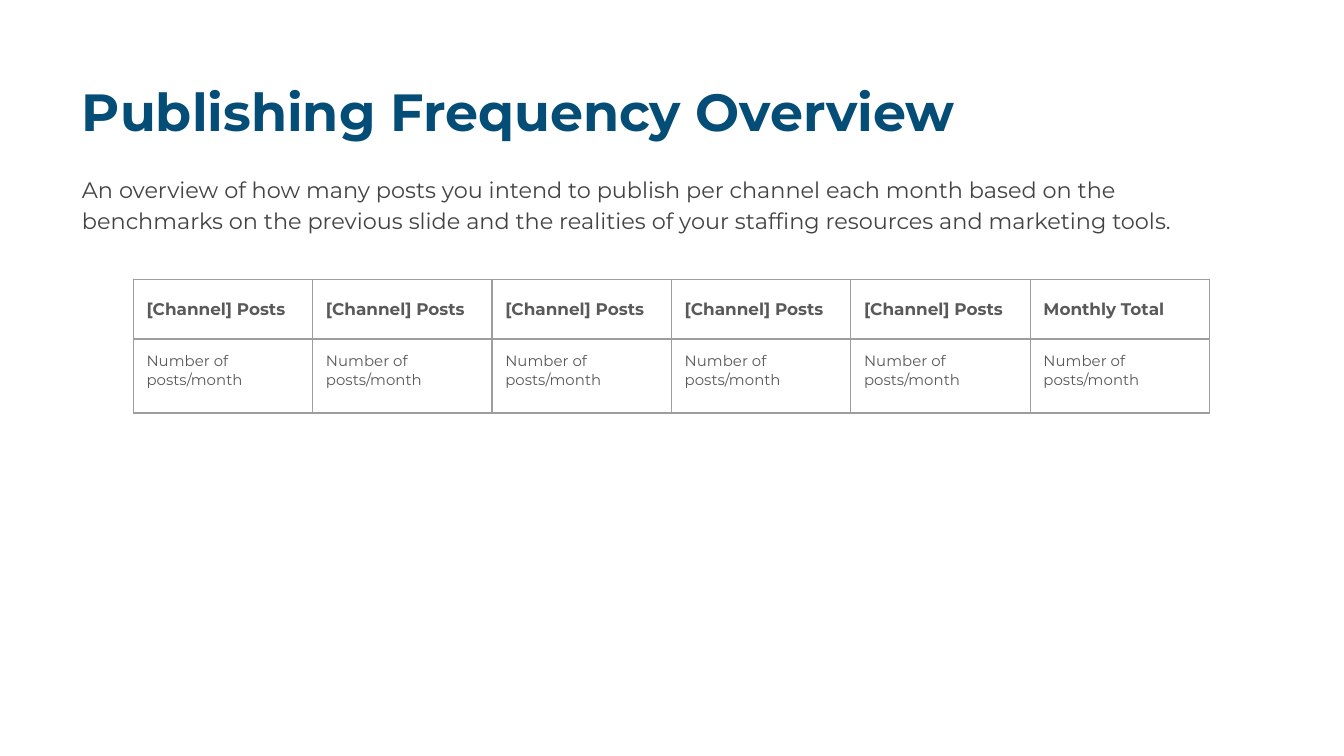
from dataclasses import dataclass

from lxml.etree import SubElement
from pptx import Presentation
from pptx.dml.color import RGBColor
from pptx.enum.text import MSO_ANCHOR as Anchor
from pptx.oxml.ns import qn
from pptx.util import Cm, Pt


@dataclass(frozen=True)
class Theme:
    font: str = "Montserrat"
    title_color: str = "034D77"
    body_color: str = "434343"
    table_color: str = "595959"
    border_color: str = "9E9E9E"
    title_size: float = 28
    body_size: float = 12
    header_size: float = 9
    cell_size: float = 8
    border_width: float = 0.75


theme = Theme()
INSET = Cm(0.25)


def write_text(holder, frame, text, size, color, bold=False):
    """Set the insets of a text box or cell and write one run in its frame."""
    holder.margin_left = holder.margin_right = INSET
    holder.margin_top = holder.margin_bottom = INSET
    frame.word_wrap = True
    paragraph = frame.paragraphs[0]
    run = paragraph.add_run()
    run.text = text
    run.font.name = theme.font
    run.font.size = Pt(size)
    run.font.bold = bold
    run.font.color.rgb = RGBColor.from_string(color)
    return paragraph


def add_borders(cell):
    """Draw the four edges of a cell; they follow one another before the fill."""
    properties = cell._tc.get_or_add_tcPr()
    for position, edge in enumerate(("a:lnL", "a:lnR", "a:lnT", "a:lnB")):
        line = SubElement(properties, qn(edge), w=str(Pt(theme.border_width)))
        fill = SubElement(line, qn("a:solidFill"))
        SubElement(fill, qn("a:srgbClr"), val=theme.border_color)
        properties.insert(position, line)


presentation = Presentation()
presentation.slide_width = Cm(25.4)
presentation.slide_height = Cm(14.29)
slide = presentation.slides.add_slide(presentation.slide_layouts[6])

# Title
title = slide.shapes.add_textbox(Cm(1.3), Cm(1.24), Cm(22.83), Cm(1.6)).text_frame
write_text(title, title, "Publishing Frequency Overview",
           theme.title_size, theme.title_color, bold=True)

# Introduction
intro = slide.shapes.add_textbox(Cm(1.3), Cm(3), Cm(22.83), Cm(1.6)).text_frame
paragraph = write_text(
    intro, intro,
    "An overview of how many posts you intend to publish per channel each month "
    "based on the benchmarks on the previous slide and the realities of your "
    "staffing resources and marketing tools.",
    theme.body_size, theme.body_color)
paragraph.line_spacing = 1.15
paragraph.space_after = Pt(16)

# Frequency table
headers = ["[Channel] Posts"] * 5 + ["Monthly Total"]
column_width = Cm(3.39)
row_heights = [Cm(1.13), Cm(1.4)]
table = slide.shapes.add_table(
    len(row_heights), len(headers), Cm(2.52), Cm(5.28),
    column_width * len(headers), sum(row_heights)).table
table.first_row = table.horz_banding = False
for row, height in zip(table.rows, row_heights):
    row.height = height

for index, header in enumerate(headers):
    table.columns[index].width = column_width
    header_cell, value_cell = table.cell(0, index), table.cell(1, index)
    write_text(header_cell, header_cell.text_frame, header,
               theme.header_size, theme.table_color, bold=True)
    write_text(value_cell, value_cell.text_frame, "Number of posts/month",
               theme.cell_size, theme.table_color)
    header_cell.vertical_anchor = Anchor.MIDDLE
    value_cell.vertical_anchor = Anchor.TOP
    for cell in (header_cell, value_cell):
        cell.fill.background()
        add_borders(cell)

presentation.save("out.pptx")
